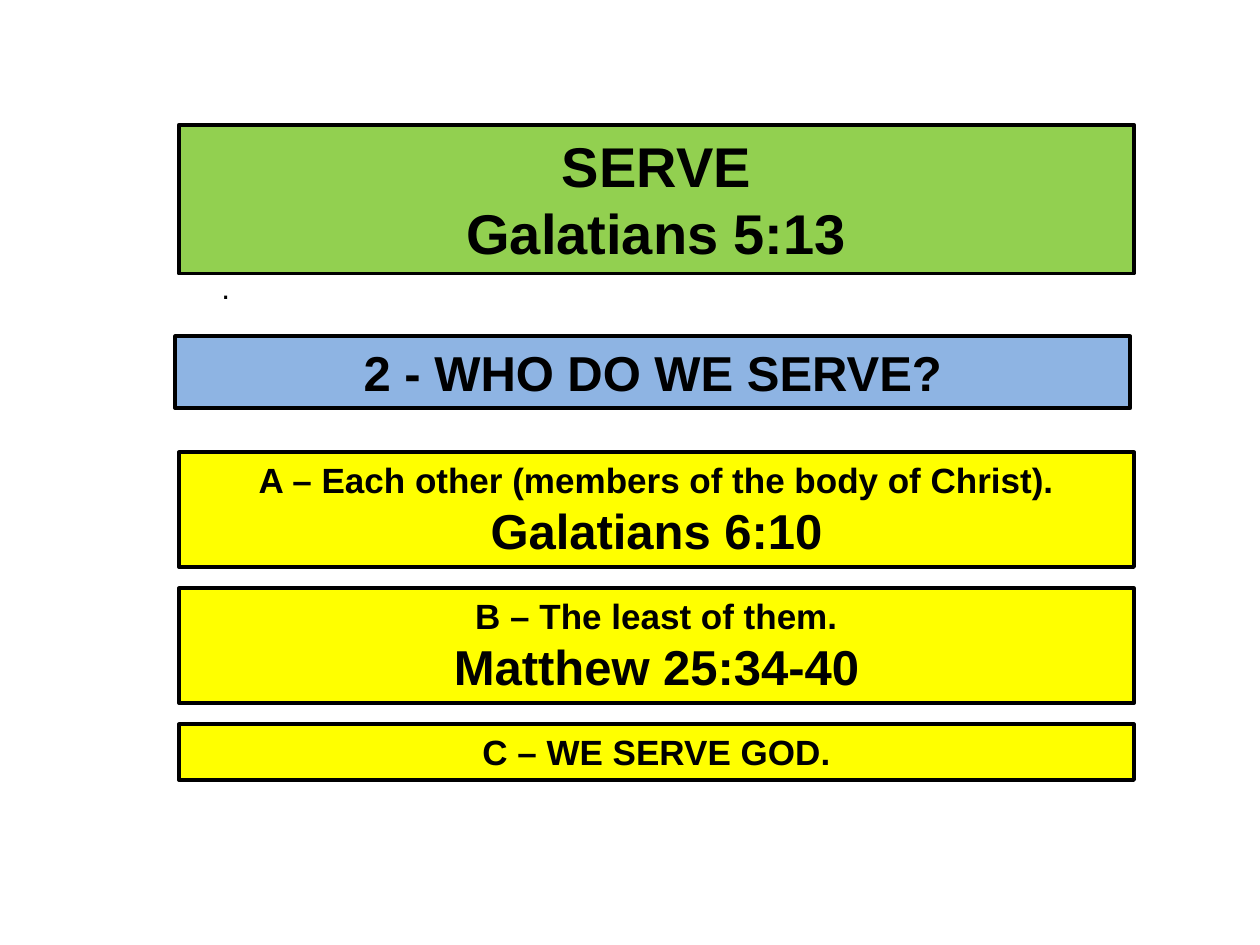
"""Build a slide outlining whom we serve, with a heading, a question and three answers."""
from pptx import Presentation
from pptx.dml.color import RGBColor
from pptx.enum.shapes import MSO_SHAPE
from pptx.enum.text import MSO_ANCHOR, MSO_AUTO_SIZE, PP_ALIGN
from pptx.util import Inches, Pt

BLACK = RGBColor(0x00, 0x00, 0x00)
GREEN = RGBColor(0x92, 0xD0, 0x50)
BLUE = RGBColor(0x8E, 0xB4, 0xE3)
YELLOW = RGBColor(0xFF, 0xFF, 0x00)

HEADING = [("SERVE", 32), ("Galatians 5:13", 32)]
QUESTION = [("2 - WHO DO WE SERVE?", 28)]
ANSWERS = [
    [("A – Each other (members of the body of Christ).", 20), ("Galatians 6:10", 28)],
    [("B – The least of them.", 20), ("Matthew 25:34-40", 28)],
    [("C – WE SERVE GOD.", 20)],
]
LEFT, BOX_WIDTH = 1.42, 7.58
ANSWERS_TOP, ANSWER_GAP = 3.59, 0.17
ANSWER_HEIGHTS = {1: 0.44, 2: 0.91}


def write_text(shape, lines, bold=True, align=PP_ALIGN.CENTER, wrap=True):
    frame = shape.text_frame
    frame.word_wrap = wrap
    frame.auto_size = MSO_AUTO_SIZE.SHAPE_TO_FIT_TEXT
    frame.vertical_anchor = MSO_ANCHOR.TOP
    for index, (text, size) in enumerate(lines):
        paragraph = frame.add_paragraph() if index else frame.paragraphs[0]
        paragraph.alignment = align
        run = paragraph.add_run()
        run.text = text
        run.font.name = "Arial"
        run.font.size = Pt(size)
        run.font.bold = bold
        run.font.color.rgb = BLACK


def place_box(shape, lines, top, height, fill, left=LEFT):
    write_text(shape, lines)
    shape.left, shape.top = Inches(left), Inches(top)
    shape.width, shape.height = Inches(BOX_WIDTH), Inches(height)
    shape.fill.solid()
    shape.fill.fore_color.rgb = fill
    shape.line.color.rgb = BLACK
    shape.line.width = Pt(2.25)


def add_box(slide, lines, top, height, fill, left=LEFT):
    shape = slide.shapes.add_shape(
        MSO_SHAPE.RECTANGLE, Inches(left), Inches(top), Inches(BOX_WIDTH), Inches(height)
    )
    shape.shadow.inherit = False
    place_box(shape, lines, top, height, fill, left)


def main():
    presentation = Presentation()
    presentation.slide_width, presentation.slide_height = Inches(10), Inches(7.5)
    slide = presentation.slides.add_slide(presentation.slide_layouts[5])

    place_box(slide.shapes.title, HEADING, 0.99, 1.18, GREEN)
    dot = slide.shapes.add_textbox(Inches(1.66), Inches(2.08), Inches(0.27), Inches(0.4))
    write_text(dot, [(".", 18)], bold=False, align=PP_ALIGN.LEFT, wrap=False)
    add_box(slide, QUESTION, 2.67, 0.57, BLUE, left=1.39)

    top = ANSWERS_TOP
    for lines in ANSWERS:
        height = ANSWER_HEIGHTS[len(lines)]
        add_box(slide, lines, top, height, YELLOW)
        top += height + ANSWER_GAP

    presentation.save("out.pptx")


if __name__ == "__main__":
    main()
